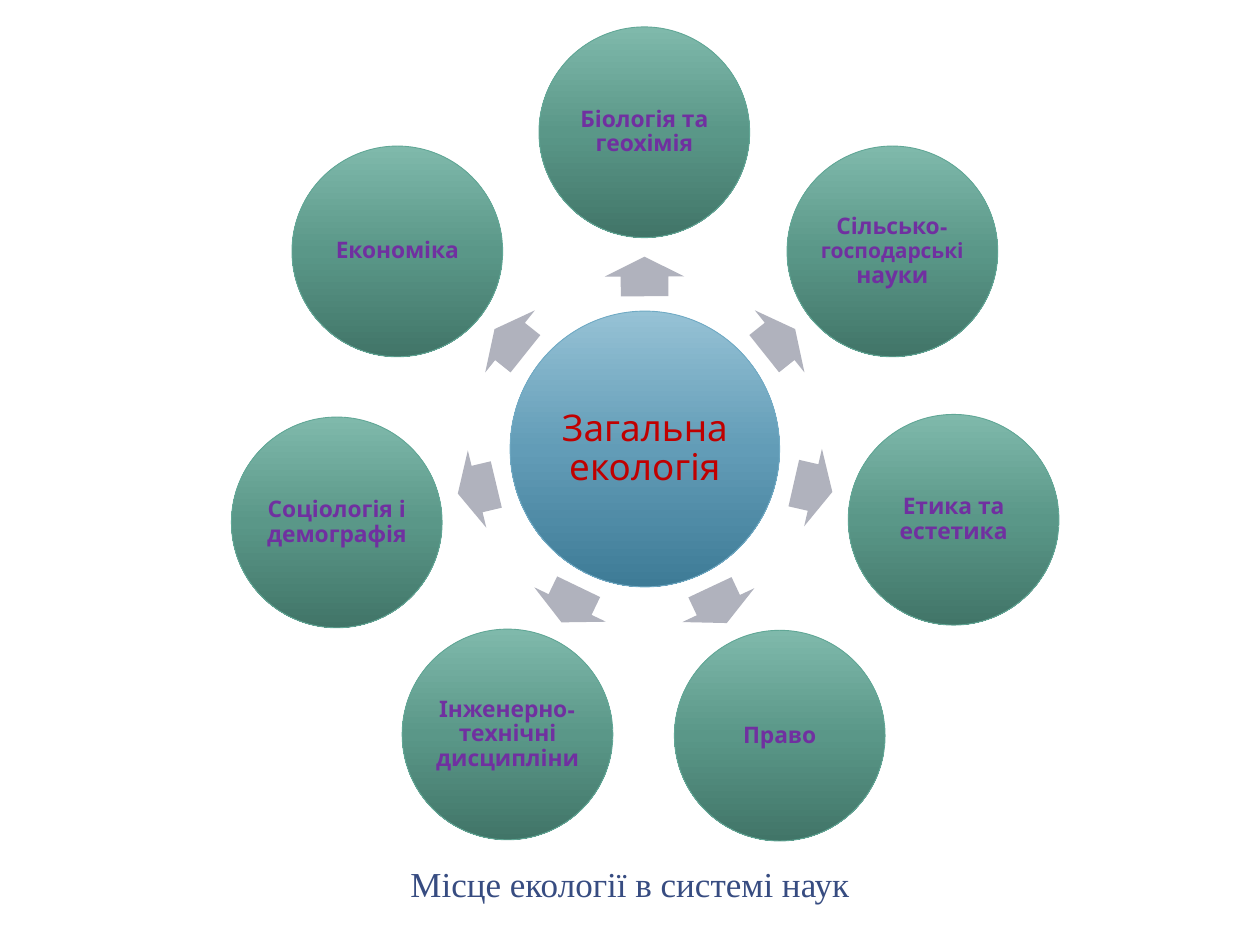
"""Build a radial diagram of the sciences around general ecology."""
from copy import deepcopy
from dataclasses import dataclass
from math import cos, radians, sin

from pptx import Presentation
from pptx.dml.color import RGBColor
from pptx.enum.shapes import MSO_SHAPE
from pptx.enum.text import MSO_ANCHOR, MSO_AUTO_SIZE, PP_ALIGN
from pptx.oxml.ns import qn
from pptx.util import Pt

CIRCLE = MSO_SHAPE.OVAL
ARROW = MSO_SHAPE.RIGHT_ARROW
MIDDLE = MSO_ANCHOR.MIDDLE
CENTER = PP_ALIGN.CENTER
GROW = MSO_AUTO_SIZE.SHAPE_TO_FIT_TEXT

HUB_X, HUB_Y = 368.5, 256.6
SCIENCE_RADIUS, ARROW_RADIUS = 181, 98.6
ARROW_WIDTH, ARROW_HEIGHT = 22.6, 45.4
ARROW_COLOR = "B0B2BD"


@dataclass(frozen=True)
class CircleStyle:
    width: float
    height: float
    gradient: tuple[str, str, str]
    outline: str
    inset: float
    text_color: str
    bold: bool


@dataclass(frozen=True)
class Science:
    angle: float
    runs: tuple[tuple[str, float], ...]


HUB_STYLE = CircleStyle(154, 157.6, ("96C2D5", "629CB7", "3E7B96"), "70AAC4", 2, "C00000", False)
SCIENCE_STYLE = CircleStyle(120.4, 120.4, ("7FB9AB", "5A9788", "417568"), "61A796", 1.2, "7030A0", True)

SCIENCES = (
    Science(269.9, (("Біологія та геохімія", 13),)),
    Science(321.4, (("Сільсько-", 13), ("господарські", 12), (" науки", 13))),
    Science(12.9, (("Етика та естетика", 13),)),
    Science(64.8, (("Право", 13),)),
    Science(115.7, (("Інженерно-технічні дисципліни", 13),)),
    Science(166.6, (("Соціологія і демографія", 13),)),
    Science(218.6, (("Економіка", 13),)),
)


def color(value: str) -> RGBColor:
    """Turn a hex string into a colour."""
    return RGBColor.from_string(value)


def set_all(target, values: dict) -> None:
    """Set every attribute in the dict on the target."""
    for name, value in values.items():
        setattr(target, name, value)


def point_on_ring(radius: float, angle: float) -> tuple[float, float]:
    """Return the point at an angle on a ring around the hub."""
    turn = radians(angle)
    return HUB_X + radius * cos(turn), HUB_Y + radius * sin(turn)


def add_centered(slide, kind, x: float, y: float, width: float, height: float):
    """Add a shadowless shape centred on a point."""
    shape = slide.shapes.add_shape(kind, Pt(x - width / 2), Pt(y - height / 2), Pt(width), Pt(height))
    shape.shadow.inherit = False
    return shape


def fill_gradient(shape, shades: tuple[str, str, str]) -> None:
    """Fill a shape from top to bottom with evenly spaced shades."""
    shape.fill.gradient()
    shape.fill.gradient_angle = 270
    stop_list = shape.element.spPr.find(".//" + qn("a:gsLst"))
    stop_list.insert(1, deepcopy(stop_list[0]))
    for index, (stop, shade) in enumerate(zip(shape.fill.gradient_stops, shades)):
        stop.position = index / (len(shades) - 1)
        stop.color.rgb = color(shade)


def add_circle(slide, x: float, y: float, runs: tuple[tuple[str, float], ...], style: CircleStyle) -> None:
    """Add a labelled gradient circle."""
    circle = add_centered(slide, CIRCLE, x, y, style.width, style.height)
    fill_gradient(circle, style.gradient)
    circle.line.color.rgb = color(style.outline)
    circle.line.width = Pt(0.5)
    inset = Pt(style.inset)
    set_all(circle.text_frame, {
        "word_wrap": True, "vertical_anchor": MIDDLE, "margin_left": inset,
        "margin_right": inset, "margin_top": inset, "margin_bottom": inset,
    })
    label = circle.text_frame.paragraphs[0]
    set_all(label, {"alignment": CENTER, "line_spacing": 0.9})
    for words, size in runs:
        run = label.add_run()
        run.text = words
        set_all(run.font, {"name": "League Spartan", "size": Pt(size), "bold": style.bold})
        run.font.color.rgb = color(style.text_color)


def add_arrow(slide, angle: float) -> None:
    """Add an arrow pointing outwards from the hub."""
    arrow = add_centered(slide, ARROW, *point_on_ring(ARROW_RADIUS, angle), ARROW_WIDTH, ARROW_HEIGHT)
    arrow.rotation = angle
    arrow.adjustments[0] = 0.6
    arrow.adjustments[1] = 0.5
    arrow.fill.solid()
    arrow.fill.fore_color.rgb = color(ARROW_COLOR)
    arrow.line.fill.background()


def add_caption(slide, words: str) -> None:
    """Place the slide title as a caption below the diagram."""
    caption = slide.shapes.title
    set_all(caption, {"left": Pt(0), "top": Pt(489), "width": Pt(720), "height": Pt(31.5)})
    caption.text_frame.text = words
    set_all(caption.text_frame, {"word_wrap": True, "vertical_anchor": MIDDLE, "auto_size": GROW})
    line = caption.text_frame.paragraphs[0]
    line.alignment = CENTER
    font = line.runs[0].font
    set_all(font, {"name": "Times New Roman", "size": Pt(20)})
    font.color.rgb = color("374C81")


def main() -> None:
    """Build and save the slide."""
    deck = Presentation()
    set_all(deck, {"slide_width": Pt(720), "slide_height": Pt(540)})
    slide = deck.slides.add_slide(deck.slide_layouts[5])
    add_caption(slide, "Місце екології в системі наук")
    add_circle(slide, HUB_X, HUB_Y, (("Загальна екологія", 21),), HUB_STYLE)
    for science in SCIENCES:
        add_arrow(slide, science.angle)
        add_circle(slide, *point_on_ring(SCIENCE_RADIUS, science.angle), science.runs, SCIENCE_STYLE)
    deck.save("out.pptx")


if __name__ == "__main__":
    main()
